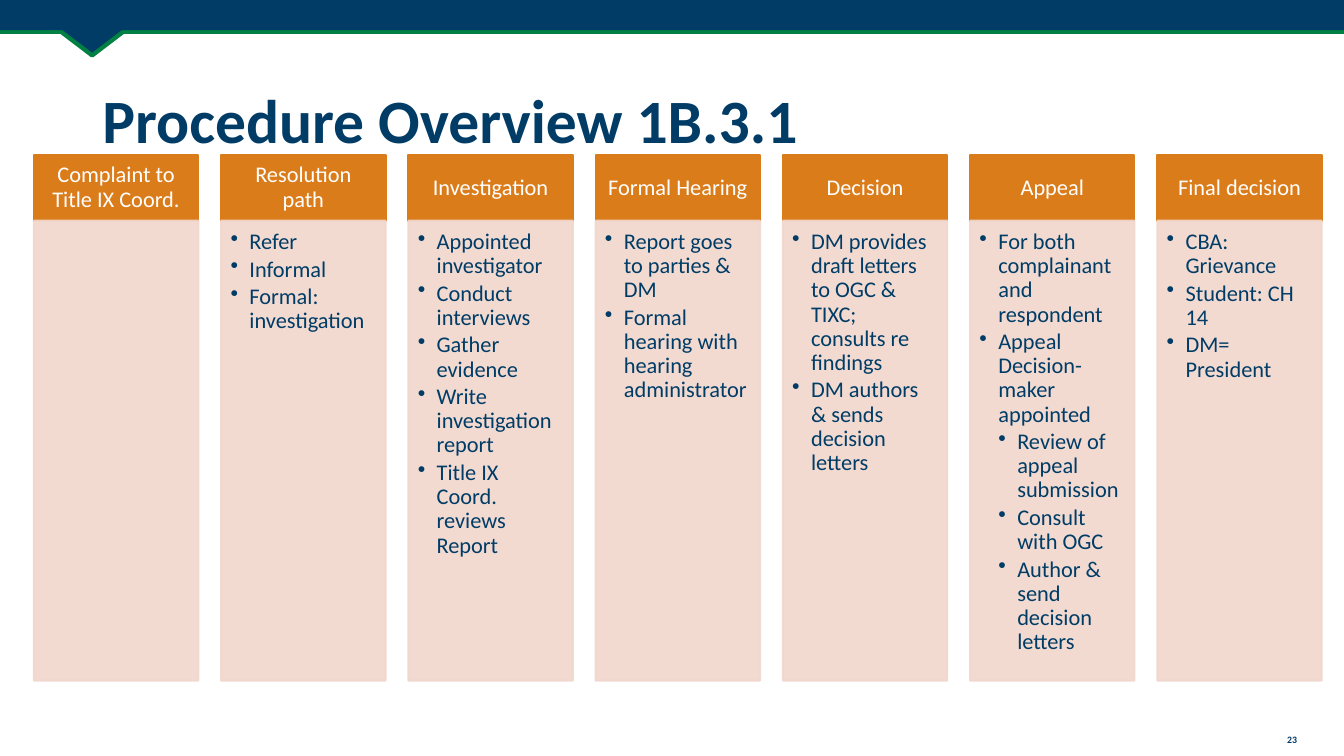
from dataclasses import dataclass

from lxml.etree import SubElement
from pptx import Presentation
from pptx.dml.color import RGBColor
from pptx.enum.shapes import MSO_CONNECTOR, MSO_SHAPE
from pptx.enum.text import MSO_ANCHOR, PP_ALIGN
from pptx.oxml.ns import qn
from pptx.util import Pt


@dataclass(frozen=True)
class Theme:
    font: str = "Calibri"
    navy: RGBColor = RGBColor(0x00, 0x3C, 0x66)
    green: RGBColor = RGBColor(0x00, 0x80, 0x42)
    orange: RGBColor = RGBColor(0xDB, 0x7C, 0x1B)
    peach: RGBColor = RGBColor(0xF1, 0xD7, 0xCD)
    white: RGBColor = RGBColor(0xFF, 0xFF, 0xFF)
    title_size: float = 44
    column_size: float = 16
    number_size: float = 7


THEME = Theme()
SLIDE_WIDTH, SLIDE_HEIGHT = 960, 540

# Each stage: heading, then (level, text) for its bullets
STAGES = [
    ("Complaint to Title IX Coord.", []),
    ("Resolution path", [
        (1, "Refer"),
        (1, "Informal"),
        (1, "Formal: investigation"),
    ]),
    ("Investigation", [
        (1, "Appointed investigator"),
        (1, "Conduct interviews"),
        (1, "Gather evidence"),
        (1, "Write investigation report"),
        (1, "Title IX Coord. reviews Report"),
    ]),
    ("Formal Hearing", [
        (1, "Report goes to parties & DM"),
        (1, "Formal hearing with hearing administrator"),
    ]),
    ("Decision", [
        (1, "DM provides draft letters to OGC & TIXC; consults re findings"),
        (1, "DM authors & sends decision letters"),
    ]),
    ("Appeal", [
        (1, "For both complainant and respondent"),
        (1, "Appeal Decision-maker appointed"),
        (2, "Review of appeal submission"),
        (2, "Consult with OGC"),
        (2, "Author & send decision letters"),
    ]),
    ("Final decision", [
        (1, "CBA: Grievance"),
        (1, "Student: CH 14"),
        (1, "DM= President"),
    ]),
]


def add_block(slide, preset, left, top, width, height, fill, line=None, line_width=1.5):
    block = slide.shapes.add_shape(preset, Pt(left), Pt(top), Pt(width), Pt(height))
    block.shadow.inherit = False
    block.fill.solid()
    block.fill.fore_color.rgb = fill
    if line is None:
        block.line.fill.background()
    else:
        block.line.color.rgb = line
        block.line.width = Pt(line_width)
    return block


def set_frame(frame, anchor, insets):
    frame.word_wrap = True
    frame.vertical_anchor = anchor
    (frame.margin_left, frame.margin_top,
     frame.margin_right, frame.margin_bottom) = map(Pt, insets)


def add_words(paragraph, words, size, color, align=PP_ALIGN.LEFT, bold=False):
    paragraph.alignment = align
    run = paragraph.add_run()
    run.text = words
    run.font.name = THEME.font
    run.font.size = Pt(size)
    run.font.bold = bold
    run.font.color.rgb = color


def add_bullet(paragraph, level, indent=13.5):
    properties = paragraph._p.get_or_add_pPr()
    properties.set("marL", str(Pt(indent * level)))
    properties.set("indent", str(-Pt(indent)))
    SubElement(properties, qn("a:buChar"), char="•")
    paragraph.level = level
    paragraph.line_spacing = 0.9
    paragraph.space_after = Pt(2.4)


def make_translucent(block, opacity):
    """Set the opacity, in percent, of a block's fill and line."""
    for color in block._element.spPr.iter(qn("a:srgbClr")):
        SubElement(color, qn("a:alpha"), val=str(opacity * 1000))


def add_banner(slide, left, top, width):
    rule_y = top + 23
    rule = slide.shapes.add_connector(
        MSO_CONNECTOR.STRAIGHT, Pt(left), Pt(rule_y), Pt(left + width), Pt(rule_y))
    rule.line.color.rgb = THEME.green
    rule.line.width = Pt(3)
    SubElement(rule._element.spPr, qn("a:effectLst"))
    pointer = add_block(slide, MSO_SHAPE.ISOSCELES_TRIANGLE, left + 28, top + 10.8,
                        75.6, 28.8, THEME.navy, THEME.green, 3)
    pointer.rotation = 180
    add_block(slide, MSO_SHAPE.RECTANGLE, left, top, width, 21.6, THEME.navy)


def add_label(slide, left, top, width, height, words, size, align, anchor):
    label = slide.shapes.add_textbox(Pt(left), Pt(top), Pt(width), Pt(height))
    set_frame(label.text_frame, anchor, (7.2, 3.6, 7.2, 3.6))
    paragraph = label.text_frame.paragraphs[0]
    paragraph.line_spacing = 0.9
    add_words(paragraph, words, size, THEME.navy, align, bold=True)


def add_stage(slide, left, top, width, height, heading, bullets, header_height=47):
    header = add_block(slide, MSO_SHAPE.RECTANGLE, left, top, width, header_height,
                       THEME.orange, THEME.orange)
    set_frame(header.text_frame, MSO_ANCHOR.MIDDLE, (8.96, 5.12, 8.96, 5.12))
    title = header.text_frame.paragraphs[0]
    title.line_spacing = 0.9
    add_words(title, heading, THEME.column_size, THEME.white, PP_ALIGN.CENTER)

    body = add_block(slide, MSO_SHAPE.RECTANGLE, left, top + header_height, width,
                     height - header_height, THEME.peach, THEME.peach)
    make_translucent(body, 90)
    frame = body.text_frame
    set_frame(frame, MSO_ANCHOR.TOP, (6.72, 6.72, 8.96, 10.08))
    for index, (level, words) in enumerate(bullets):
        paragraph = frame.add_paragraph() if index else frame.paragraphs[0]
        add_bullet(paragraph, level)
        add_words(paragraph, words, THEME.column_size, THEME.navy)


def add_stages(slide, left, top, width, height, gap=16.3):
    column_width = (width - gap * (len(STAGES) - 1)) / len(STAGES)
    for index, (heading, bullets) in enumerate(STAGES):
        add_stage(slide, left + index * (column_width + gap), top,
                  column_width, height, heading, bullets)


def main():
    deck = Presentation()
    deck.slide_width, deck.slide_height = Pt(SLIDE_WIDTH), Pt(SLIDE_HEIGHT)
    slide = deck.slides.add_slide(deck.slide_layouts[6])
    add_banner(slide, 0, 0, SLIDE_WIDTH)
    add_label(slide, 905, 521.3, 36, 15.8, "23", THEME.number_size,
              PP_ALIGN.CENTER, MSO_ANCHOR.TOP)
    add_label(slide, 66, 36, 828, 104.4, "Procedure Overview 1B.3.1",
              THEME.title_size, PP_ALIGN.LEFT, MSO_ANCHOR.MIDDLE)
    add_stages(slide, 24.2, 110.7, 919.9, 375.5)
    deck.save("out.pptx")


if __name__ == "__main__":
    main()
